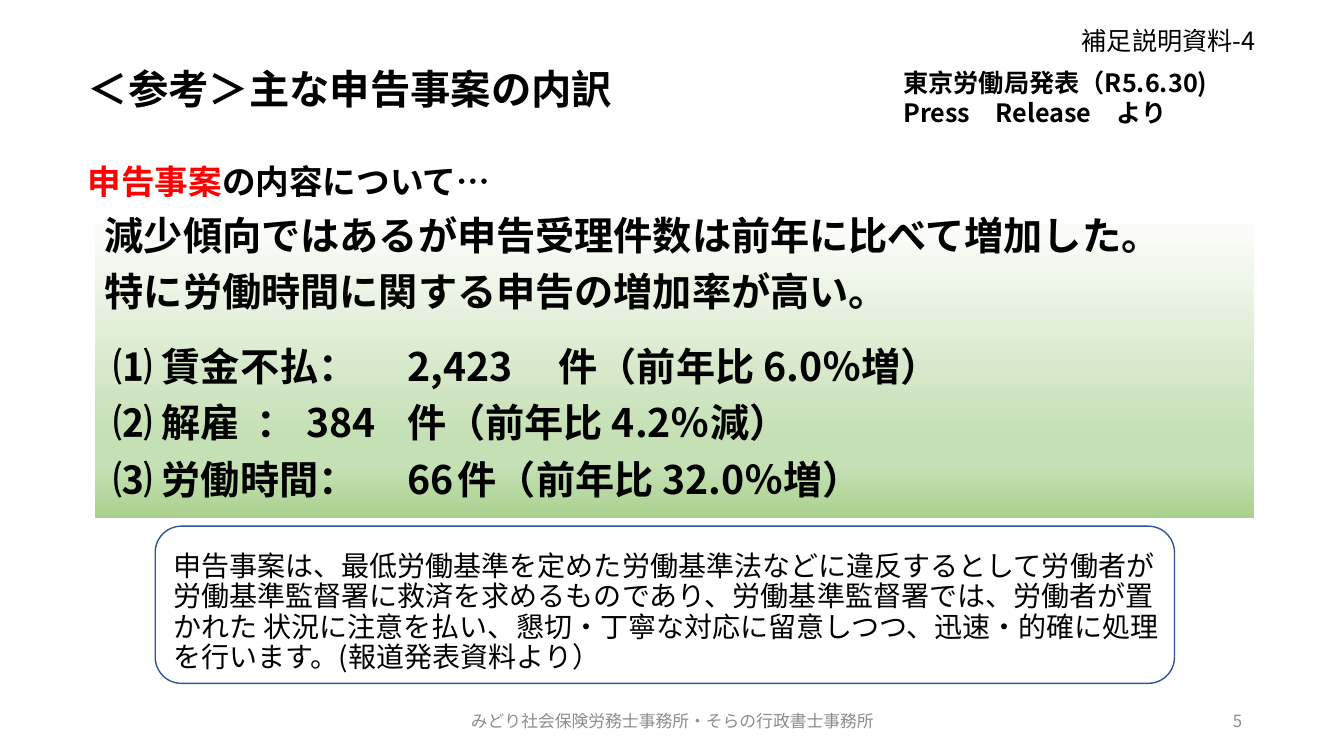
from lxml import etree
from pptx import Presentation
from pptx.dml.color import RGBColor
from pptx.enum.shapes import MSO_SHAPE
from pptx.enum.text import MSO_ANCHOR, MSO_AUTO_SIZE, PP_ALIGN
from pptx.oxml.ns import qn
from pptx.util import Inches, Pt

ROUNDED = MSO_SHAPE.ROUNDED_RECTANGLE
TOP, MIDDLE = MSO_ANCHOR.TOP, MSO_ANCHOR.MIDDLE
LEFT, CENTER, RIGHT = PP_ALIGN.LEFT, PP_ALIGN.CENTER, PP_ALIGN.RIGHT
NO_FIT = MSO_AUTO_SIZE.NONE

BLACK, RED, GREY, NAVY = "000000", "FF0000", "8C8C8C", "325491"
GREENS = [(0, "FFFFFF"), (74, "C5E0B4"), (83, "C5E0B4"), (100, "A9D18E")]
# Stops for the colon, the count and the text after it, in inches
TABS = [(2.11, "l"), (3.72, "r"), (3.85, "l")]


def rgb(value):
    return RGBColor.from_string(value)


class Deck:
    """Style and current slide; boxes are percentages of the slide's size."""

    font = "Noto Sans CJK JP"

    def __init__(self):
        self.prs = Presentation()
        self.prs.slide_width, self.prs.slide_height = Inches(13.33), Inches(7.5)
        self.s = self.prs.slides.add_slide(self.prs.slide_layouts[1])

    def box(self, x, y, w, h):
        sw, sh = self.prs.slide_width, self.prs.slide_height
        return [int(n * side / 100) for n, side in zip((x, y, w, h), (sw, sh, sw, sh))]

    def style(self, p, size, color=BLACK, bold=False, align=LEFT):
        p.alignment = align
        for r in p.runs:
            r.font.name, r.font.size, r.font.bold = self.font, Pt(size), bold
            r.font.color.rgb = rgb(color)
            etree.SubElement(r.font._element, qn("a:ea"), typeface=self.font)

    def spacing(self, p, before=10):
        p.line_spacing, p.space_before = 0.9, Pt(before)

    def text(self, box, text, size, color=BLACK, bold=False, align=LEFT, anchor=TOP):
        sp = self.s.shapes.add_textbox(*self.box(*box))
        tf = sp.text_frame
        tf.word_wrap, tf.vertical_anchor = True, anchor
        tf.text = text
        self.style(tf.paragraphs[0], size, color, bold, align)
        return tf.paragraphs[0]

    def place(self, sp, box, anchor):
        sp.left, sp.top, sp.width, sp.height = self.box(*box)
        tf = sp.text_frame
        tf.word_wrap, tf.auto_size, tf.vertical_anchor = True, NO_FIT, anchor
        return tf

    def title(self, box, text, size):
        tf = self.place(self.s.shapes.title, box, MIDDLE)
        tf.text = text
        self.style(tf.paragraphs[0], size, bold=True)

    def body(self, box, lines, size):
        sp = self.s.placeholders[1]
        tf = self.place(sp, box, TOP)
        tf.text = "\n".join(text for text, _ in lines)
        for p, (_, before) in zip(tf.paragraphs, lines):
            self.style(p, size, bold=True)
            self.spacing(p, before)
            pPr = p._p.get_or_add_pPr()
            pPr.set("marL", "0")
            pPr.set("indent", "0")
            etree.SubElement(pPr, qn("a:buNone"))
            tabs = etree.SubElement(pPr, qn("a:tabLst"))
            for pos, algn in TABS:
                etree.SubElement(tabs, qn("a:tab"), pos=str(Inches(pos)), algn=algn)
        return sp

    def gradient(self, sp, stops):
        sp.fill.gradient()
        sp.fill.gradient_angle = 270
        gs_list = sp._element.spPr.find(qn("a:gradFill")).find(qn("a:gsLst"))
        for gs in list(gs_list):
            gs_list.remove(gs)
        for pos, color in stops:
            gs = etree.SubElement(gs_list, qn("a:gs"), pos=str(pos * 1000))
            etree.SubElement(gs, qn("a:srgbClr"), val=color)

    def frame(self, box, color, width):
        sp = self.s.shapes.add_shape(ROUNDED, *self.box(*box))
        sp.shadow.inherit = False
        sp.fill.background()
        sp.line.color.rgb, sp.line.width = rgb(color), Pt(width)


def main():
    deck = Deck()

    # Headings
    deck.title((5.78, 6, 43.14, 11.47), "＜参考＞主な申告事案の内訳", 28.8)
    deck.text((79.74, 2.67, 16.8, 5.33), "補足説明資料-4", 18)
    deck.text((66.47, 8.27, 29.56, 9.47),
              "東京労働局発表（R5.6.30)　Press　Release　より", 18, bold=True)
    p = deck.text((5.78, 20.67, 41.04, 6.67), "申告事案", 24, RED, True)
    p.add_run().text = "の内容について…"
    deck.style(p, 24, bold=True)
    p.runs[0].font.color.rgb = rgb(RED)

    # Summary and breakdown of the cases
    cases = [("⑴ 賃金不払：", "2,423", "6.0％増"),
             ("⑵ 解雇\t：", "384", "4.2％減"),
             ("⑶ 労働時間：", "66", "32.0％増")]
    lines = [("減少傾向ではあるが申告受理件数は前年に比べて増加した。", 10),
             ("特に労働時間に関する申告の増加率が高い。", 10)]
    for i, (label, count, change) in enumerate(cases):
        lines.append((f" {label}\t{count}\t件（前年比 {change}）", 10 if i else 23))
    panel = deck.body((7.05, 28, 86.27, 40.53), lines, 28)
    deck.gradient(panel, GREENS)

    # Explanatory note
    deck.frame((11.55, 69.6, 75.84, 20.8), NAVY, 1)
    note = deck.text(
        (12.15, 70, 75.77, 22.13),
        "申告事案は、最低労働基準を定めた労働基準法などに違反するとして労働者が"
        "労働基準監督署に救済を求めるものであり、労働基準監督署では、労働者が置かれた "
        "状況に注意を払い、懇切・丁寧な対応に留意しつつ、迅速・的確に処理を行います。"
        "(報道発表資料より）", 20, anchor=MIDDLE)
    deck.spacing(note)

    # Footer
    deck.text((33.16, 92.67, 33.76, 5.33),
              "みどり社会保険労務士事務所・そらの行政書士事務所",
              12, GREY, align=CENTER, anchor=MIDDLE)
    deck.text((70.67, 92.67, 22.5, 5.33), "5", 12, GREY, align=RIGHT, anchor=MIDDLE)

    deck.prs.save("out.pptx")


if __name__ == "__main__":
    main()
